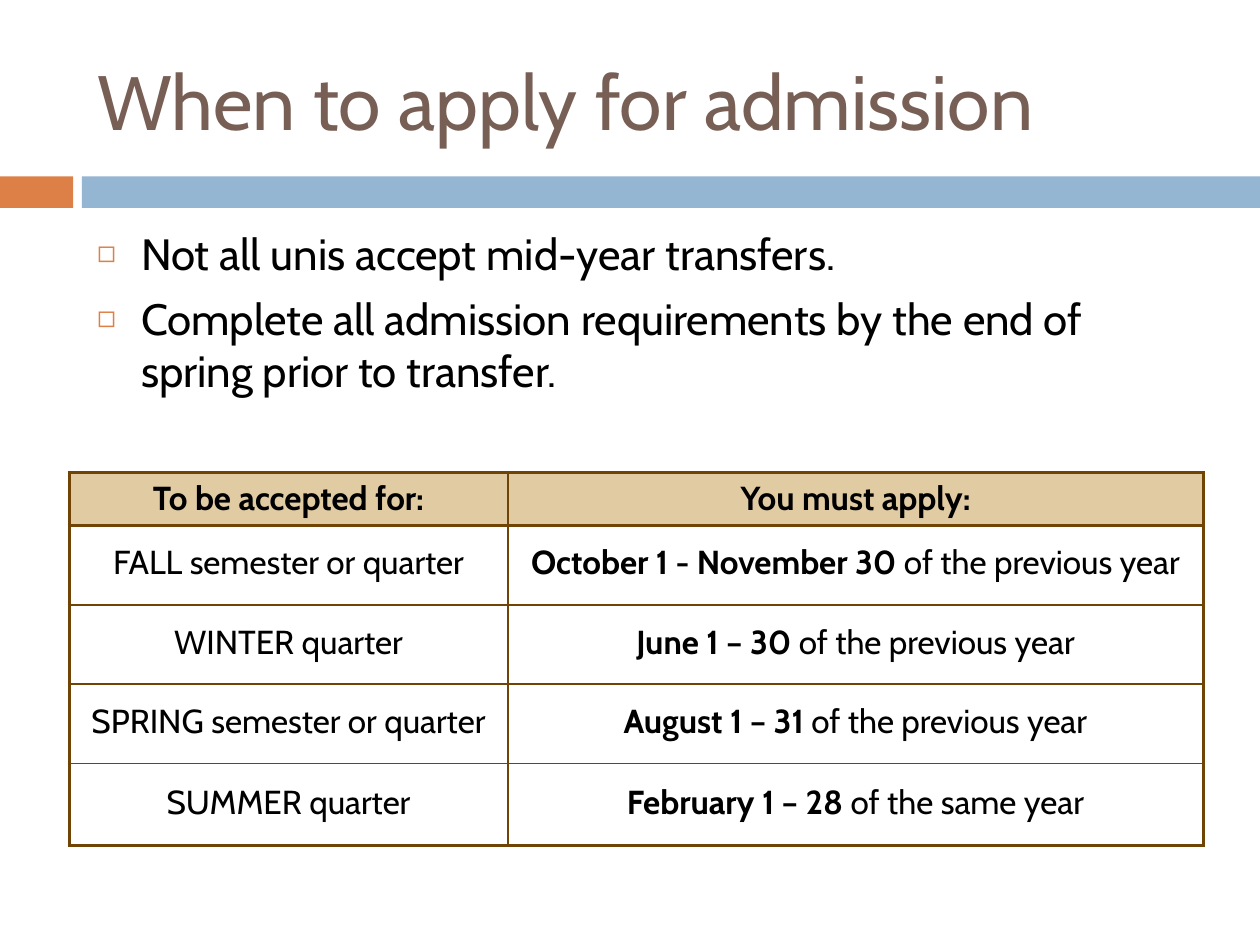
from dataclasses import dataclass

from lxml import etree
from pptx import Presentation
from pptx import util as u
from pptx.dml import color
from pptx.enum import shapes, text
from pptx.oxml import ns

FONT = "Cabin"
ORANGE, BLUE, BROWN = "DD8047", "94B6D2", "775F55"
BLACK, TAN, EDGE = "000000", "E0CBA3", "704404"
PLAIN = "{2D5ABB26-0587-4C30-8999-92F81FD0307C}"
COLS = (3.48, 5.52)
THICK, THIN = 2.25, 1


@dataclass
class Bar:
    left: float
    width: float
    fill: str


@dataclass
class Term:
    name: str
    dates: str
    year: str
    height: float = 0.63


BARS = (Bar(0, 0.58, ORANGE), Bar(0.65, 9.35, BLUE))
POINTS = (
    "Not all unis accept mid-year transfers.",
    "Complete all admission requirements by the end of spring prior to transfer.",
)
HEADS = ("To be accepted for:", "You must apply:")
TERMS = (
    Term("FALL semester or quarter", "October 1 - November 30 ", "of the previous year"),
    Term("WINTER quarter", "June 1 – 30", " of the previous year"),
    Term("SPRING semester or quarter", "August 1 – 31 ", "of the previous year"),
    Term("SUMMER quarter", "February 1 – 28 ", "of the same year", 0.65),
)


def rgb(code: str) -> color.RGBColor:
    return color.RGBColor.from_string(code)


def add(parent, tag: str, **attrs: str):
    return etree.SubElement(parent, ns.qn(tag), attrs)


def style(run, size: float, code: str = BLACK, bold: bool = False) -> None:
    font = run.font
    font.name, font.size, font.bold = FONT, u.Pt(size), bold
    font.color.rgb = rgb(code)


def place(shape, left: float, top: float, width: float, height: float) -> None:
    shape.left, shape.top = u.Inches(left), u.Inches(top)
    shape.width, shape.height = u.Inches(width), u.Inches(height)


def draw_bar(slide, bar: Bar) -> None:
    shape = slide.shapes.add_shape(
        shapes.MSO_SHAPE.RECTANGLE,
        u.Inches(bar.left), u.Inches(1.4), u.Inches(bar.width), u.Inches(0.25),
    )
    shape.shadow.inherit = False
    shape.fill.solid()
    shape.fill.fore_color.rgb = rgb(bar.fill)
    shape.line.fill.background()


def draw_title(slide) -> None:
    title = slide.shapes.title
    place(title, 0.67, 0.25, 8.92, 1.08)
    frame = title.text_frame
    frame.text = "When to apply for admission"
    frame.auto_size = text.MSO_AUTO_SIZE.NONE
    frame.vertical_anchor = text.MSO_ANCHOR.MIDDLE
    para = frame.paragraphs[0]
    para.alignment = text.PP_ALIGN.LEFT
    style(para.runs[0], 44, BROWN)


def draw_list(slide) -> None:
    body = slide.placeholders[1]
    place(body, 0.67, 1.75, 8.92, 1.76)
    frame = body.text_frame
    frame.text = "\n".join(POINTS)
    frame.auto_size = text.MSO_AUTO_SIZE.NONE
    for para in frame.paragraphs:
        para.space_before = u.Pt(7)
        style(para.runs[0], 25)
        props = para._p.get_or_add_pPr()
        props.set("marL", str(u.Inches(0.35)))
        props.set("indent", str(u.Inches(-0.35)))
        add(add(props, "a:buClr"), "a:srgbClr", val=ORANGE)
        add(props, "a:buSzPct", val="70000")
        add(props, "a:buChar", char="◻")


def set_edges(cell, row: int, col: int) -> None:
    last = len(TERMS)
    widths = {
        "a:lnL": THICK if col == 0 else THIN,
        "a:lnR": THICK if col == 1 else THIN,
        "a:lnT": THICK if row <= 1 else THIN,
        "a:lnB": THICK if row in (0, last) else THIN,
    }
    props = cell._tc.get_or_add_tcPr()
    for tag, width in widths.items():
        line = add(props, tag, w=str(u.Pt(width)))
        add(add(line, "a:solidFill"), "a:srgbClr", val=EDGE)


def fill_cell(cell, row: int, col: int, parts: tuple) -> None:
    set_edges(cell, row, col)
    cell.vertical_anchor = text.MSO_ANCHOR.MIDDLE
    if row == 0:
        cell.fill.solid()
        cell.fill.fore_color.rgb = rgb(TAN)
    else:
        cell.fill.background()
    para = cell.text_frame.paragraphs[0]
    para.alignment = text.PP_ALIGN.CENTER
    para.space_before = u.Pt(4)
    if row:
        para.line_spacing = 0.8
    for words, bold in parts:
        run = para.add_run()
        run.text = words
        style(run, 19, bold=bold)


def draw_table(slide) -> None:
    tall = (0.42, *(term.height for term in TERMS))
    frame = slide.shapes.add_table(
        len(tall), len(COLS), u.Inches(0.55), u.Inches(3.75),
        u.Inches(sum(COLS)), u.Inches(sum(tall)),
    )
    table = frame.table
    table.first_row = table.horz_banding = False
    table._tbl.tblPr.find(ns.qn("a:tableStyleId")).text = PLAIN
    for col, width in zip(table.columns, COLS):
        col.width = u.Inches(width)
    for row, height in zip(table.rows, tall):
        row.height = u.Inches(height)
    grid = [[((head, True),) for head in HEADS]]
    for term in TERMS:
        grid.append([((term.name, False),), ((term.dates, True), (term.year, False))])
    for row, cells in enumerate(grid):
        for col, parts in enumerate(cells):
            fill_cell(table.cell(row, col), row, col, parts)


def main() -> None:
    deck = Presentation()
    deck.slide_width, deck.slide_height = u.Inches(10), u.Inches(7.5)
    slide = deck.slides.add_slide(deck.slide_layouts[1])
    for bar in BARS:
        draw_bar(slide, bar)
    draw_title(slide)
    draw_list(slide)
    draw_table(slide)
    deck.save("out.pptx")


if __name__ == "__main__":
    main()
